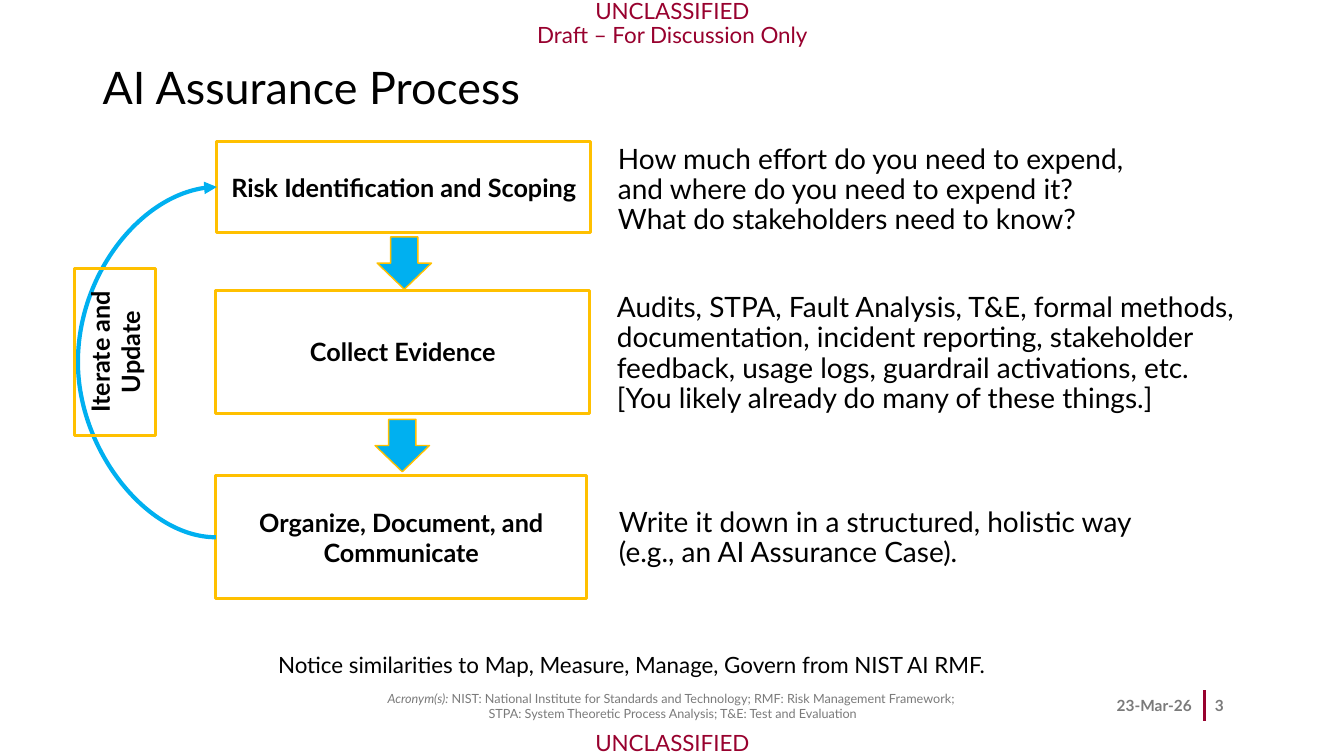
"""Build the AI Assurance Process slide."""
from dataclasses import dataclass

from lxml import etree
from pptx import Presentation
from pptx import util as u
from pptx.dml.color import RGBColor
from pptx.enum import shapes, text
from pptx.oxml import ns

LEFT, MID, RIGHT = text.PP_ALIGN.LEFT, text.PP_ALIGN.CENTER, text.PP_ALIGN.RIGHT
TOP, HALF, BASE = text.MSO_ANCHOR.TOP, text.MSO_ANCHOR.MIDDLE, text.MSO_ANCHOR.BOTTOM


@dataclass(frozen=True)
class Theme:
    """Fonts, colours and type sizes."""
    font: str = "Lato"
    ink: str = "000000"
    gray: str = "7A7A7A"
    mark: str = "98012E"
    gold: str = "FFC000"
    blue: str = "00B0F0"
    title: int = 32
    body: int = 20
    step: int = 18
    note: int = 16
    foot: int = 11
    tiny: int = 9


class Deck:
    """Holds the theme and the current slide."""

    def __init__(self, theme):
        self.look = theme
        self.prs = Presentation()
        self.prs.slide_width, self.prs.slide_height = u.Inches(13.33), u.Inches(7.5)
        self.slide = self.prs.slides.add_slide(self.prs.slide_layouts[6])

    def words(self, frame, paras, size, color, bold=False, align=LEFT, anchor=TOP,
              pad=0.05, space=1.0):
        """Fill a frame; each paragraph is a list of (words, italic) runs."""
        frame.word_wrap = True
        frame.vertical_anchor = anchor
        frame.margin_left = frame.margin_right = u.Inches(0.1)
        frame.margin_top = frame.margin_bottom = u.Inches(pad)
        for i, runs in enumerate(paras):
            para = frame.add_paragraph() if i else frame.paragraphs[0]
            para.alignment, para.line_spacing = align, space
            for words, slant in runs:
                for j, line in enumerate(words.split("\n")):
                    if j:
                        para.add_line_break()
                    run = para.add_run()
                    run.text = line
                    font = run.font
                    font.name, font.size = self.look.font, u.Pt(size)
                    font.bold, font.italic = bold, slant
                    font.color.rgb = RGBColor.from_string(color)

    def label(self, at, paras, size, color, **style):
        """Add a text box."""
        box = self.slide.shapes.add_textbox(*map(u.Inches, at))
        self.words(box.text_frame, paras, size, color, **style)

    def plain(self, at, words, size, pad=0.1, **style):
        """Add a black text box of one paragraph."""
        self.label(at, [[(words, False)]], size, self.look.ink, pad=pad, space=0.9, **style)

    def shape(self, kind, at, width, fill=None):
        """Add a gold-edged preset shape."""
        item = self.slide.shapes.add_shape(kind, *map(u.Inches, at))
        item.shadow.inherit = False
        if fill:
            item.fill.solid()
            item.fill.fore_color.rgb = RGBColor.from_string(fill)
        else:
            item.fill.background()
        item.line.color.rgb = RGBColor.from_string(self.look.gold)
        item.line.width = u.Pt(width)
        return item

    def step(self, at, words, turn=0):
        """Add a bold labelled box."""
        box = self.shape(shapes.MSO_SHAPE.RECTANGLE, at, 2.25)
        box.rotation = turn
        self.words(box.text_frame, [[(words, False)]], self.look.step, self.look.ink,
                   bold=True, align=MID, anchor=HALF)
        return box

    def arrow(self, left, top):
        """Add a block arrow pointing down."""
        self.shape(shapes.MSO_SHAPE.DOWN_ARROW, (left, top, 0.54, 0.52), 1, self.look.blue)

    def line(self, kind, ends, color, width):
        """Add a connector without shadow."""
        link = self.slide.shapes.add_connector(kind, *map(u.Inches, ends))
        link.line.color.rgb = RGBColor.from_string(color)
        link.line.width = u.Pt(width)
        etree.SubElement(link._element.spPr, ns.qn("a:effectLst"))
        return link

    def loop(self, start, end, reach):
        """Add a curved arrow between two left sides, bulging left to reach."""
        link = self.line(shapes.MSO_CONNECTOR.CURVE, (2.14, 5.33, 2.15, 1.85),
                         self.look.blue, 3)
        link.begin_connect(start, 1)
        link.end_connect(end, 1)
        props = link._element.spPr
        frame = props.find(ns.qn("a:xfrm"))
        frame.attrib.pop("flipV", None)
        frame.set("rot", "10800000")
        frame.set("flipH", "1")
        bulge = round((u.Inches(reach) - link.left) / link.width * 100000)
        guides = props.find(ns.qn("a:prstGeom")).get_or_add_avLst()
        etree.SubElement(guides, ns.qn("a:gd"), name="adj1", fmla=f"val {bulge}")
        edge = props.find(ns.qn("a:ln"))
        etree.SubElement(edge, ns.qn("a:tailEnd"), type="triangle")


def main():
    """Draw the slide and save it."""
    look = Theme()
    deck = Deck(look)
    stamp = [("UNCLASSIFIED", False)]
    deck.line(shapes.MSO_CONNECTOR.STRAIGHT, (11.95, 6.85, 11.95, 7.15), look.mark, 2)
    deck.label((4.17, 0, 5, 0.4), [stamp, [("Draft – For Discussion Only", False)]],
               look.note, look.mark, align=MID, pad=0, space=0.9)
    deck.label((4.67, 7.1, 4, 0.4), [stamp], look.note, look.mark,
               align=MID, anchor=BASE, pad=0, space=0.9)
    deck.plain((0.92, 0.4, 11.5, 0.78), "AI Assurance Process", look.title,
               pad=0.05, anchor=BASE)

    for at, words in (
        ((6.03, 1.34, 6.9, 1.04), "How much effort do you need to expend, \n"
         "and where do you need to expend it? \nWhat do stakeholders need to know?"),
        ((6.02, 2.81, 7.07, 1.35), "Audits, STPA, Fault Analysis, T&E, formal methods, "
         "documentation, incident reporting, stakeholder feedback, usage logs, "
         "guardrail activations, etc. \n[You likely already do many of these things.]"),
        ((6.04, 4.94, 6.89, 0.86), "Write it down in a structured, holistic way \n"
         "(e.g., an AI Assurance Case)."),
    ):
        deck.plain(at, words, look.body)

    scope = deck.step((2.15, 1.4, 3.71, 0.91), "Risk Identification and Scoping")
    deck.step((2.14, 2.88, 3.71, 1.22), "Collect Evidence")
    report = deck.step((2.14, 4.72, 3.68, 1.22), "Organize, Document, and Communicate")
    deck.arrow(3.74, 2.35)
    deck.arrow(3.72, 4.16)
    deck.loop(report, scope, 0.75)
    deck.step((0.31, 3.09, 1.66, 0.8), "Iterate and Update", turn=270)

    deck.plain((2.66, 6.39, 8.03, 0.4),
               "Notice similarities to Map, Measure, Manage, Govern from NIST AI RMF.", look.note)
    deck.label((2.67, 6.8, 8, 0.4), [
        [("Acronym(s):", True), (" NIST: National Institute for Standards and Technology; "
                                 "RMF: Risk Management Framework; ", False)],
        [("STPA: System Theoretic Process Analysis; T&E: Test and Evaluation", False)],
    ], look.tiny, look.gray, align=MID, anchor=HALF)
    for at, words, align in (((10.92, 6.8, 1, 0.4), "23-Mar-26", RIGHT),
                             ((11.95, 6.8, 0.47, 0.4), "3", LEFT)):
        deck.label(at, [[(words, False)]], look.foot, look.gray,
                   bold=True, align=align, anchor=HALF)
    deck.prs.save("out.pptx")


if __name__ == "__main__":
    main()
